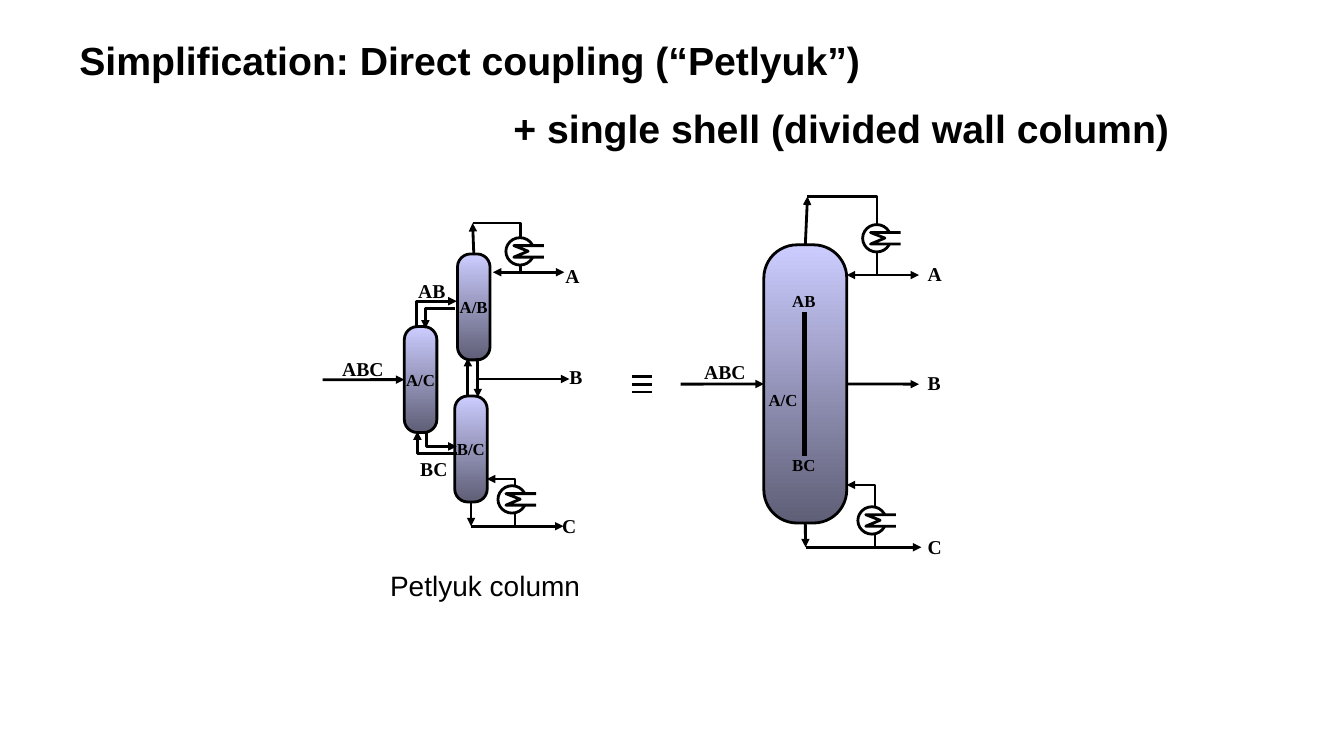
import pptx
import pptx.util
import pptx.dml.color
import pptx.enum.shapes
import pptx.enum.text
import pptx.oxml.ns
import lxml.etree

Cm, Pt = pptx.util.Cm, pptx.util.Pt
KIND = pptx.enum.shapes.MSO_SHAPE
ALIGN = pptx.enum.text.PP_ALIGN
ANCHOR = pptx.enum.text.MSO_ANCHOR
qn = pptx.oxml.ns.qn

HUES = {"ink": "000000", "paper": "FFFFFF", "light": "CCCCFF", "dark": "5E5E76"}
SERIF, SANS = "Times New Roman", "Arial"


def hue(name):
    return pptx.dml.color.RGBColor.from_string(HUES[name])


def write(shape, text, size, font, bold=True, align=ALIGN.LEFT):
    frame = shape.text_frame
    frame.text = text
    par = frame.paragraphs[0]
    par.alignment = align
    for run in par.runs:
        run.font.size, run.font.name, run.font.bold = Pt(size), font, bold
        run.font.color.rgb = hue("ink")
    return frame


def stroke(shape, ends="", width=2):
    """Black line; ends may hold "head" and "tail" arrows."""
    shape.line.color.rgb = hue("ink")
    shape.line.width = Pt(width)
    ln = shape._element.spPr.find(qn("a:ln"))
    for end in ("head", "tail"):
        if end in ends:
            lxml.etree.SubElement(ln, qn(f"a:{end}End"), type="triangle")


class Region:
    """Draws parts in cm from the corner of its box."""

    def __init__(self, slide, left, top):
        self.shapes, self.left, self.top = slide.shapes, left, top

    def spot(self, x, y):
        return Cm(self.left + x), Cm(self.top + y)

    def line(self, start, end, ends="tail", width=2, source=None, target=None):
        link = self.shapes.add_connector(
            pptx.enum.shapes.MSO_CONNECTOR.STRAIGHT, *self.spot(*start), *self.spot(*end))
        if source:
            link.begin_connect(*source)
        if target:
            link.end_connect(*target)
        stroke(link, ends, width)
        lxml.etree.SubElement(link._element.spPr, qn("a:effectLst"))

    def pipe(self, points, ends="", filled=False):
        build = self.shapes.build_freeform(*self.spot(*points[0]))
        build.add_line_segments([self.spot(*p) for p in points[1:]], close=False)
        shape = build.convert_to_shape()
        shape.shadow.inherit = False
        if filled:
            shape.fill.solid()
            shape.fill.fore_color.rgb = hue("paper")
        else:
            shape.fill.background()
        stroke(shape, ends)

    def label(self, text, x, y, width=1, size=14, align=ALIGN.LEFT):
        box = self.shapes.add_textbox(*self.spot(x, y), Cm(width), Cm(0.84))
        write(box, text, size, SERIF, align=align).word_wrap = True

    def shell(self, x, y, width, height, text=""):
        col = self.shapes.add_shape(
            KIND.ROUNDED_RECTANGLE, *self.spot(x, y), Cm(width), Cm(height))
        col.adjustments[0] = 0.4
        col.shadow.inherit = False
        col.fill.gradient()
        col.fill.gradient_angle = 270
        for stop, name in zip(col.fill.gradient_stops, ("light", "dark")):
            stop.color.rgb = hue(name)
        stroke(col)
        if text:
            frame = write(col, text, 12, SERIF, align=ALIGN.CENTER)
            frame.word_wrap, frame.vertical_anchor = False, ANCHOR.MIDDLE
        return col

    def cooler(self, x, y):
        ring = self.shapes.add_shape(KIND.OVAL, *self.spot(x, y), Cm(0.71), Cm(0.69))
        ring.shadow.inherit = False
        ring.fill.solid()
        ring.fill.fore_color.rgb = hue("paper")
        stroke(ring)
        coil = [(0.96, 0.49), (0.2, 0.49), (0.56, 0.34), (0.2, 0.2), (0.96, 0.2)]
        self.pipe([(x + a, y + b) for a, b in coil], filled=True)

    def head(self, col, base, peak, bend, draw, start, end):
        """Vapour rises from col, condenses and leaves as A at height draw."""
        self.line(base, peak, source=(col, 0))
        self.pipe([peak, (bend, peak[1]), (bend, draw)])
        self.line((start, draw), (end, draw), "head tail")
        self.cooler(bend - 0.36, draw - 1.27 if peak[1] < 0.1 else draw - 0.87)

    def foot(self, col, base, floor, bend, back, end):
        """Liquid falls from col, is partly boiled back and leaves as C."""
        self.line(base, (base[0], floor), source=(col, 2))
        self.line((base[0], floor), (end, floor))
        self.pipe([(bend, floor), (bend, back[1]), back], "tail")
        self.cooler(bend - 0.43, floor - 1.02)


def titles(slide):
    second = slide.shapes.add_textbox(Cm(11.84), Cm(2.64), Cm(21.6), Cm(1.2))
    rows = [(slide.shapes.title, "Simplification: Direct coupling (“Petlyuk”)", 0),
            (second, "+ single shell (divided wall column)", 1.1)]
    head = slide.shapes.title
    head.left, head.top, head.width, head.height = Cm(2), Cm(0.91), Cm(28.8), Cm(1.2)
    for box, text, inset in rows:
        frame = write(box, text, 28, SANS)
        frame.word_wrap, frame.vertical_anchor = True, ANCHOR.TOP
        frame.margin_left = Cm(inset)
        frame.margin_top = frame.margin_right = frame.margin_bottom = 0


def petlyuk(slide, left, top):
    area = Region(slide, left, top)
    # Three columns
    upper = area.shell(3.53, 0.9, 0.82, 2.67, "A/B")
    lower = area.shell(3.46, 4.48, 0.82, 2.67, "B/C")
    first = area.shell(2.19, 2.73, 0.82, 2.67, "A/C")
    # Condenser, reboiler and feed
    area.head(upper, (3.94, 0.9), (3.91, 0.12), 5.11, 1.36, 4.42, 6.22)
    area.foot(lower, (3.87, 7.15), 7.76, 4.98, (4.27, 6.57), 6.2)
    area.line((0.13, 4.07), (2.19, 4.07), target=(first, 1))
    # Couplings between columns
    area.pipe([(2.49, 2.73), (2.49, 2.09), (3.51, 2.09)], "tail")
    area.pipe([(3.48, 2.27), (2.72, 2.27), (2.72, 2.78)], "tail")
    area.pipe([(3.51, 5.93), (2.52, 5.93), (2.52, 5.37)], "tail")
    area.pipe([(2.74, 5.37), (2.74, 5.75), (3.51, 5.75)], "tail")
    area.line((4.04, 3.52), (4.04, 4.51))
    area.line((3.79, 4.51), (3.79, 3.52))
    area.line((4.04, 4.05), (6.35, 4.05))
    # Stream names
    area.label("ABC", -0.08, 3.36, 2, align=ALIGN.RIGHT)
    for text, x, y in [("AB", 2.29, 1.41), ("BC", 2.34, 5.88)]:
        area.label(text, x, y, 1.4)
    for text, x, y in [("A", 6, 1.03), ("B", 6.1, 3.57), ("C", 5.92, 7.33)]:
        area.label(text, x, y)
    note = slide.shapes.add_textbox(*area.spot(1.58, 8.7), Cm(5.33), Cm(1.11))
    write(note, "Petlyuk column", 20, SANS, bold=False).word_wrap = False


def equal(slide, left, top):
    area = Region(slide, left, top)
    for row in range(3):
        area.line((0, row * 0.2), (0.5, row * 0.2), "")


def divided(slide, left, top):
    area = Region(slide, left, top)
    # Single shell with its wall
    col = area.shell(3.45, 1.27, 2.09, 7.01)
    area.line((4.47, 2.97), (4.47, 6.58), "", 4)
    # Condenser, reboiler, feed and side draw
    area.head(col, (4.5, 1.27), (4.55, 0.05), 6.3, 2.03, 5.54, 7.36)
    area.foot(col, (4.5, 8.28), 8.89, 6.25, (5.54, 7.32), 7.42)
    area.line((1.35, 4.78), (3.45, 4.78), target=(col, 1))
    area.line((5.54, 4.78), (7.36, 4.78), source=(col, 3))
    # Stream names
    area.label("ABC", 1.24, 4.04, 2, align=ALIGN.RIGHT)
    for text, y in [("A", 1.58), ("B", 4.32), ("C", 8.46)]:
        area.label(text, 7.33, y)
    area.label("A/C", 2.95, 4.8, 1.6, 12, ALIGN.RIGHT)
    for text, y in [("AB", 2.29), ("BC", 6.43)]:
        area.label(text, 3.76, y, 1.4, 12, ALIGN.CENTER)


def main():
    deck = pptx.Presentation()
    deck.slide_width, deck.slide_height = Cm(33.87), Cm(19.05)
    slide = deck.slides.add_slide(deck.slide_layouts[5])
    titles(slide)
    petlyuk(slide, 8, 5.5)
    equal(slide, 15.93, 9.48)
    divided(slide, 15.8, 4.9)
    deck.save("out.pptx")


if __name__ == "__main__":
    main()
